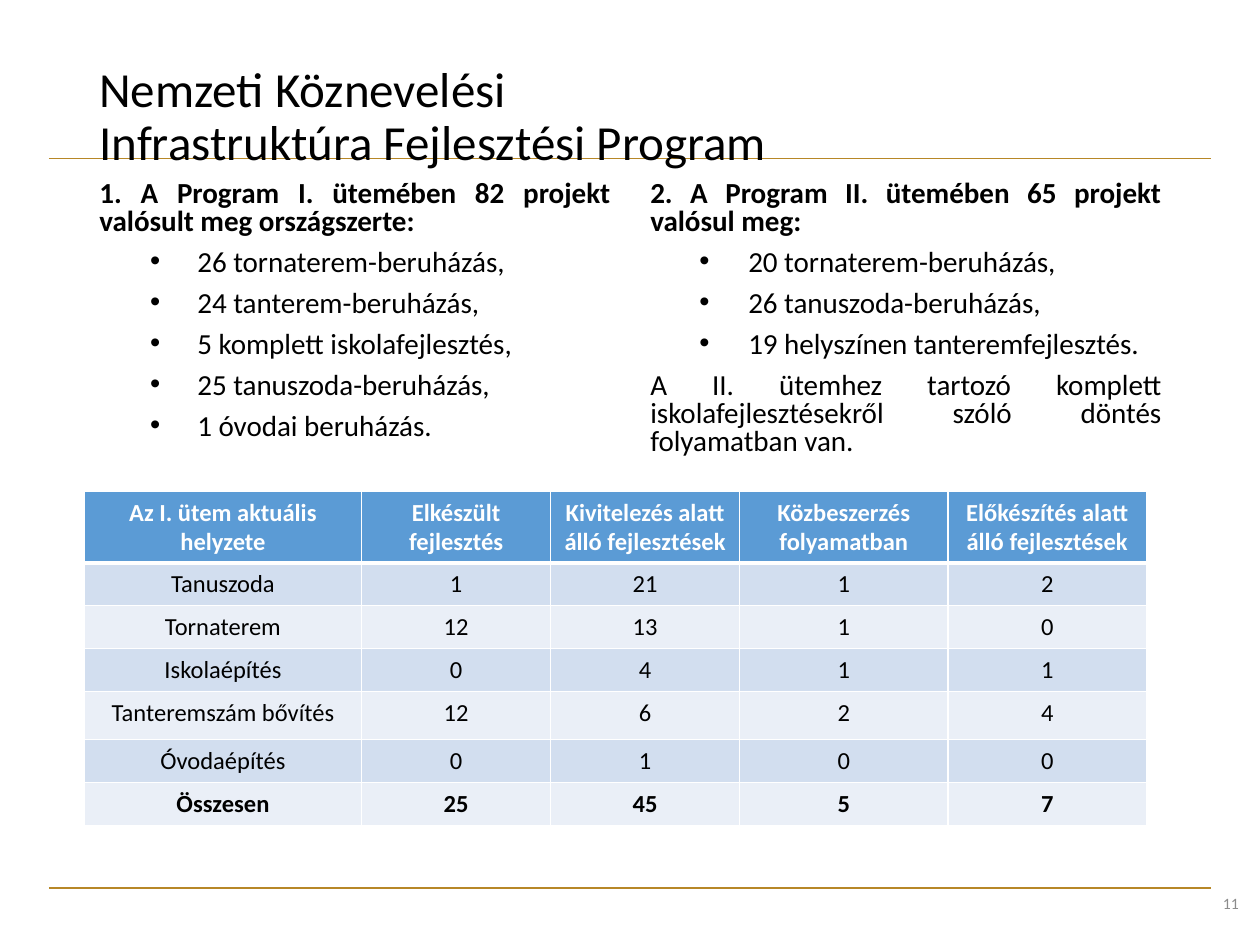
from dataclasses import dataclass

from lxml.etree import SubElement
from pptx import Presentation
from pptx.dml.color import RGBColor
from pptx.enum.shapes import MSO_CONNECTOR
from pptx.enum.text import MSO_ANCHOR, PP_ALIGN
from pptx.oxml.ns import qn
from pptx.util import Pt


@dataclass(frozen=True)
class Theme:
    font: str = "Calibri"
    ink: str = "000000"
    white: str = "FFFFFF"
    muted: str = "8C8C8C"
    rule: str = "B78727"
    header: str = "5B9BD5"
    bands: tuple = ("D2DEEF", "EAEFF7")
    title_size: float = 28
    body_size: float = 16.6
    table_size: float = 14
    number_size: float = 9


THEME = Theme()

TITLE = ["Nemzeti Köznevelési", "Infrastruktúra Fejlesztési Program"]
PHASE_ONE = (
    "1. A Program I. ütemében 82 projekt valósult meg országszerte:",
    ["26 tornaterem-beruházás,", "24 tanterem-beruházás,", "5 komplett iskolafejlesztés,",
     "25 tanuszoda-beruházás,", "1 óvodai beruházás."],
)
PHASE_TWO = (
    "2. A Program II. ütemében 65 projekt valósul meg:",
    ["20 tornaterem-beruházás,", "26 tanuszoda-beruházás,", "19 helyszínen tanteremfejlesztés."],
)
PHASE_TWO_NOTE = ("A II. ütemhez tartozó komplett iskolafejlesztésekről "
                  "szóló döntés folyamatban van.")
STATUS = [
    ["Az I. ütem aktuális helyzete", "Elkészült fejlesztés", "Kivitelezés alatt álló fejlesztések",
     "Közbeszerzés folyamatban", "Előkészítés alatt álló fejlesztések"],
    ["Tanuszoda", 1, 21, 1, 2],
    ["Tornaterem", 12, 13, 1, 0],
    ["Iskolaépítés", 0, 4, 1, 1],
    ["Tanteremszám bővítés", 12, 6, 2, 4],
    ["Óvodaépítés", 0, 1, 0, 0],
    ["Összesen", 25, 45, 5, 7],
]
COLUMN_WIDTHS = [158.5, 108, 108, 119, 113.5]
ROW_HEIGHTS = [34.5, 24.5, 24.5, 24.5, 27.5, 24.5, 24.5]


def add_run(paragraph, text, size, color=THEME.ink, bold=False):
    run = paragraph.add_run()
    run.text = text
    run.font.name = THEME.font
    run.font.size = Pt(size)
    run.font.bold = bold
    run.font.color.rgb = RGBColor.from_string(color)


def add_text_frame(slide, left, top, width, height, anchor=MSO_ANCHOR.TOP):
    frame = slide.shapes.add_textbox(Pt(left), Pt(top), Pt(width), Pt(height)).text_frame
    frame.word_wrap = True
    frame.vertical_anchor = anchor
    return frame


def add_rule(slide, y):
    rule = slide.shapes.add_connector(MSO_CONNECTOR.STRAIGHT, Pt(28), Pt(y), Pt(692), Pt(y))
    rule.line.color.rgb = RGBColor.from_string(THEME.rule)
    rule.line.width = Pt(1)
    SubElement(rule._element.spPr, qn("a:effectLst"))


def add_title(slide):
    frame = add_text_frame(slide, 49.7, 28.8, 620.6, 77, MSO_ANCHOR.MIDDLE)
    heading = frame.paragraphs[0]
    heading.line_spacing = 0.9
    first, second = TITLE
    add_run(heading, first, THEME.title_size)
    heading.add_line_break()
    add_run(heading, second, THEME.title_size)


def set_bullet(paragraph, hanging):
    properties = paragraph._p.get_or_add_pPr()
    properties.set("marL", str(Pt(56)))
    properties.set("indent", str(-Pt(hanging)))
    SubElement(properties, qn("a:buFont"), typeface="Arial")
    SubElement(properties, qn("a:buChar"), char="•")


def add_body_line(paragraph, text, bold=False):
    paragraph.alignment = PP_ALIGN.JUSTIFY
    paragraph.line_spacing = 0.8
    add_run(paragraph, text, THEME.body_size, bold=bold)


def add_phase(slide, left, height, phase, hanging, note=None):
    heading, projects = phase
    frame = add_text_frame(slide, left, 100, 306, height)
    add_body_line(frame.paragraphs[0], heading, bold=True)
    for project in projects:
        item = frame.add_paragraph()
        set_bullet(item, hanging)
        item.space_before = Pt(7.5)
        add_body_line(item, project)
    if note:
        closing = frame.add_paragraph()
        closing.space_before = Pt(7.5)
        add_body_line(closing, note)


def set_borders(cell, top, bottom):
    properties = cell._tc.get_or_add_tcPr()
    for side, width in (("L", 1), ("R", 1), ("T", top), ("B", bottom)):
        border = SubElement(properties, qn(f"a:ln{side}"), w=str(Pt(width)))
        fill = SubElement(border, qn("a:solidFill"))
        SubElement(fill, qn("a:srgbClr"), val=THEME.white)


def fill_cell(cell, value, row):
    is_header = row == 0
    is_total = row == len(STATUS) - 1
    set_borders(cell, top=3 if row == 1 else 1, bottom=3 if is_header else 1)
    cell.fill.solid()
    background = THEME.header if is_header else THEME.bands[(row - 1) % 2]
    cell.fill.fore_color.rgb = RGBColor.from_string(background)
    paragraph = cell.text_frame.paragraphs[0]
    paragraph.alignment = PP_ALIGN.CENTER
    add_run(paragraph, str(value), THEME.table_size,
            THEME.white if is_header else THEME.ink, is_header or is_total)


def add_status_table(slide):
    table = slide.shapes.add_table(
        len(STATUS), len(COLUMN_WIDTHS), Pt(48.2), Pt(280.8),
        Pt(sum(COLUMN_WIDTHS)), Pt(sum(ROW_HEIGHTS))).table
    table.horz_banding = False
    for column, width in zip(table.columns, COLUMN_WIDTHS):
        column.width = Pt(width)
    for row, height in zip(table.rows, ROW_HEIGHTS):
        row.height = Pt(height)
    for row, values in enumerate(STATUS):
        for column, value in enumerate(values):
            fill_cell(table.cell(row, column), value, row)


def add_slide_number(slide):
    frame = add_text_frame(slide, 553, 502, 162, 28.8, MSO_ANCHOR.MIDDLE)
    number = frame.paragraphs[0]
    number.alignment = PP_ALIGN.RIGHT
    add_run(number, "11", THEME.number_size, THEME.muted)


def main():
    deck = Presentation()
    deck.slide_width, deck.slide_height = Pt(720), Pt(540)
    slide = deck.slides.add_slide(deck.slide_layouts[6])
    for y in (90.6, 507.3):
        add_rule(slide, y)
    add_title(slide)
    add_phase(slide, 49.7, 187, PHASE_ONE, hanging=27)
    add_phase(slide, 364.5, 181.5, PHASE_TWO, hanging=28, note=PHASE_TWO_NOTE)
    add_slide_number(slide)
    add_status_table(slide)
    deck.save("out.pptx")


if __name__ == "__main__":
    main()
